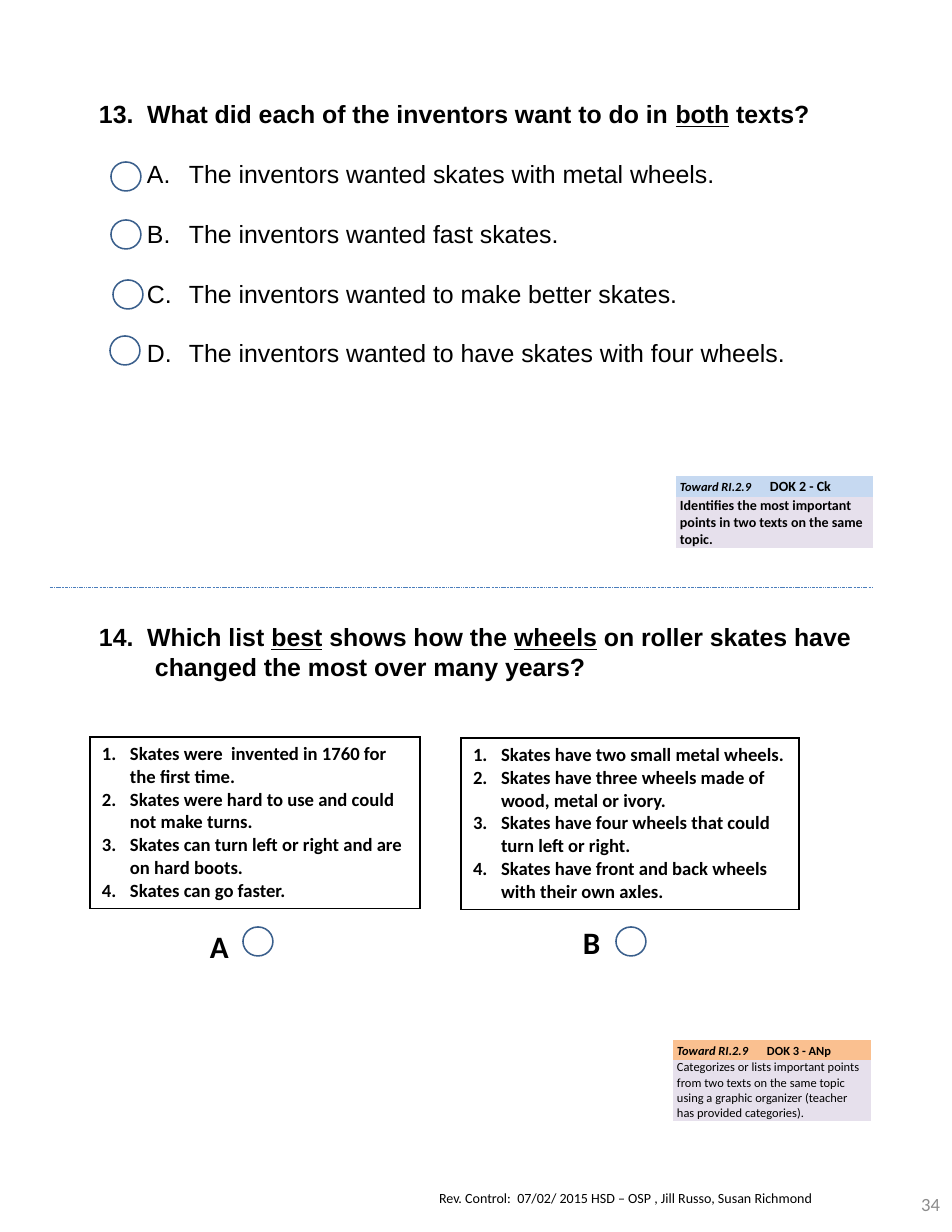
from lxml.etree import SubElement
from pptx import Presentation
from pptx.dml.color import RGBColor
from pptx.enum.dml import MSO_LINE
from pptx.enum.shapes import MSO_CONNECTOR, MSO_SHAPE
from pptx.enum.text import MSO_ANCHOR, MSO_AUTO_SIZE, PP_ALIGN
from pptx.oxml.ns import qn
from pptx.util import Pt

PX = 914400 / 112
COLORS = {
    "text": "000000", "white": "FFFFFF", "number": "8C8C8C",
    "ring": "3A5F8C", "divider": "4B7EBC",
    "blue": "C6D9F1", "orange": "FAC090", "lilac": "E6E0EC",
}
PLAIN_TABLE = "{2D5ABB26-0587-4C30-8999-92F81FD0307C}"


def px(n):
    return round(n * PX)


def rgb(name):
    return RGBColor.from_string(COLORS[name])


def write(p, text, size=12, font="Calibri", color="text", bold=False,
          italic=False, underline=False):
    r = p.add_run()
    r.text = text
    f = r.font
    f.size, f.name, f.bold, f.italic, f.underline = Pt(size), font, bold, italic, underline
    f.color.rgb = rgb(color)
    return r


def indent(p, left, hang, numbering=None):
    pPr = p._p.get_or_add_pPr()
    pPr.set("marL", str(px(left)))
    pPr.set("indent", str(px(-hang)))
    if numbering:
        SubElement(pPr, qn("a:buFont"), typeface="+mj-lt")
        SubElement(pPr, qn("a:buAutoNum"), type=numbering)
    else:
        SubElement(pPr, qn("a:buNone"))


def spacing(p, line, after=0):
    p.line_spacing, p.space_before, p.space_after = Pt(line), Pt(0), Pt(after)


def place(sp, x, y, w, h, anchor=MSO_ANCHOR.TOP):
    sp.left, sp.top, sp.width, sp.height = px(x), px(y), px(w), px(h)
    tf = sp.text_frame
    tf.word_wrap, tf.auto_size, tf.vertical_anchor = True, MSO_AUTO_SIZE.NONE, anchor
    tf.margin_left = tf.margin_right = px(12)
    tf.margin_top = tf.margin_bottom = px(6)
    return tf


def label(s, x, y, w, h, text, align=PP_ALIGN.LEFT, anchor=MSO_ANCHOR.TOP, **fmt):
    p = place(s.shapes.add_textbox(0, 0, 0, 0), x, y, w, h, anchor).paragraphs[0]
    p.alignment = align
    write(p, text, **fmt)


def heading(sp, x, y, w, h, parts, left, hang):
    p = place(sp, x, y, w, h).paragraphs[0]
    p.alignment = PP_ALIGN.LEFT
    spacing(p, 19.2)
    indent(p, left, hang)
    for i, text in enumerate(parts):
        write(p, text, size=16, font="Arial", bold=True, underline=i % 2 == 1)


def ring(s, x, y):
    sp = s.shapes.add_shape(MSO_SHAPE.OVAL, px(x), px(y), px(30), px(29))
    sp.shadow.inherit = False
    sp.fill.solid()
    sp.fill.fore_color.rgb = rgb("white")
    sp.line.color.rgb = rgb("ring")
    sp.line.width = Pt(1)


def plain_table(s, x, y, w, heights, margin_x, margin_y):
    frame = s.shapes.add_table(len(heights), 1, px(x), px(y), px(w), px(sum(heights)))
    table = frame.table
    table.first_row = table.horz_banding = False
    table._tbl.tblPr.find(qn("a:tableStyleId")).text = PLAIN_TABLE
    cells = []
    for i, h in enumerate(heights):
        table.rows[i].height = px(h)
        cell = table.cell(i, 0)
        cell.margin_left = cell.margin_right = px(margin_x)
        cell.margin_top = cell.margin_bottom = px(margin_y)
        cells.append(cell)
    return cells


def standard(s, x, y, w, heights, level, text, color, level_size, bold, line=1.0):
    head, body = plain_table(s, x, y, w, heights, 4, 0)
    head.vertical_anchor = MSO_ANCHOR.MIDDLE
    for cell, name in ((head, color), (body, "lilac")):
        cell.fill.solid()
        cell.fill.fore_color.rgb = rgb(name)
    p = head.text_frame.paragraphs[0]
    p.line_spacing = line
    tabs = SubElement(p._p.get_or_add_pPr(), qn("a:tabLst"))
    SubElement(tabs, qn("a:tab"), pos=str(px(90)), algn="l")
    write(p, "Toward RI.2.9\t", size=8, bold=True, italic=True)
    write(p, level, size=level_size, bold=True)
    write(body.text_frame.paragraphs[0], text, size=level_size, bold=bold)


def list_box(s, x, y, w, h, items):
    cell, = plain_table(s, x, y, w, [h], 12, 6)
    tcPr = cell._tc.get_or_add_tcPr()
    for side in ("a:lnL", "a:lnR", "a:lnT", "a:lnB"):
        ln = SubElement(tcPr, qn(side), w=str(Pt(1)))
        fill = SubElement(ln, qn("a:solidFill"))
        SubElement(fill, qn("a:srgbClr"), val=COLORS["text"])
    cell.fill.background()
    tf = cell.text_frame
    for i, text in enumerate(items):
        p = tf.add_paragraph() if i else tf.paragraphs[0]
        indent(p, 28, 28, "arabicPeriod")
        write(p, text, bold=True)


def question_13(s, x, y, w):
    heading(s.shapes.title, x, y, w, 50,
            ["13.  What did each of the inventors want to do in ", "both", " texts?"], 57, 50)
    tf = place(s.placeholders[1], x, y + 60, w, 223)
    options = ["The inventors wanted skates with metal wheels.",
               "The inventors wanted fast skates.",
               "The inventors wanted to make better skates.",
               "The inventors wanted to have skates with four wheels."]
    for i, text in enumerate(options):
        p = tf.add_paragraph() if i else tf.paragraphs[0]
        spacing(p, 19.2, after=19.2)
        indent(p, 97, 42, "alphaUcPeriod")
        write(p, text, size=16, font="Arial")
    for dx, dy in ((31, 69), (31, 127), (33, 187), (30, 243)):
        ring(s, x + dx, y + dy)
    standard(s, x + 596, y + 383, 197, [21, 50], "DOK 2 - Ck",
             "Identifies the most important points in two texts on the same topic.",
             "blue", 9, True)


def question_14(s, x, y, w):
    heading(s.placeholders[2], x, y, w, 73,
            ["14.  Which list ", "best", " shows how the ", "wheels",
             " on roller skates have changed the most over many years?"], 63, 56)
    list_box(s, x + 10, y + 121, 330, 170,
             ["Skates were  invented in 1760 for the first time.",
              "Skates were hard to use and could not make turns.",
              "Skates can turn left or right and are on hard boots.",
              "Skates can go faster."])
    list_box(s, x + 381, y + 122, 338, 168,
             ["Skates have two small metal wheels.",
              "Skates have three wheels made of wood, metal or ivory.",
              "Skates have four wheels that could turn left or right.",
              "Skates have front and back wheels with their own axles."])
    for letter, dx, dy in (("A", 118, 305), ("B", 491, 301)):
        label(s, x + dx, y + dy, 59, 49, letter, size=20, bold=True)
        ring(s, x + dx + 45, y + 311)
    standard(s, x + 593, y + 424, 198, [20, 60], "DOK 3 - ANp",
             "Categorizes or lists important points from two texts on the same topic "
             "using a graphic organizer (teacher has provided categories).",
             "orange", 8, False, line=1.15)


def divider(s, x, y, w):
    c = s.shapes.add_connector(MSO_CONNECTOR.STRAIGHT, px(x), px(y), px(x + w), px(y))
    c.line.color.rgb = rgb("divider")
    c.line.width = Pt(0.25)
    c.line.dash_style = MSO_LINE.DASH_DOT_DOT
    SubElement(c._element.spPr, qn("a:effectLst"))


def footer(s, x, y):
    label(s, x, y, 476, 29,
          "Rev. Control:  07/02/ 2015 HSD – OSP , Jill Russo, Susan Richmond", size=9)
    label(s, x + 450, y - 8, 75, 56, "34", align=PP_ALIGN.RIGHT,
          anchor=MSO_ANCHOR.MIDDLE, size=12, color="number")


def main():
    prs = Presentation()
    prs.slide_width, prs.slide_height = px(952), px(1232)
    s = prs.slides.add_slide(prs.slide_layouts[3])
    question_13(s, 80, 93, 783)
    divider(s, 50, 587, 822)
    question_14(s, 80, 616, 783)
    footer(s, 427, 1184)
    prs.save("out.pptx")


if __name__ == "__main__":
    main()
